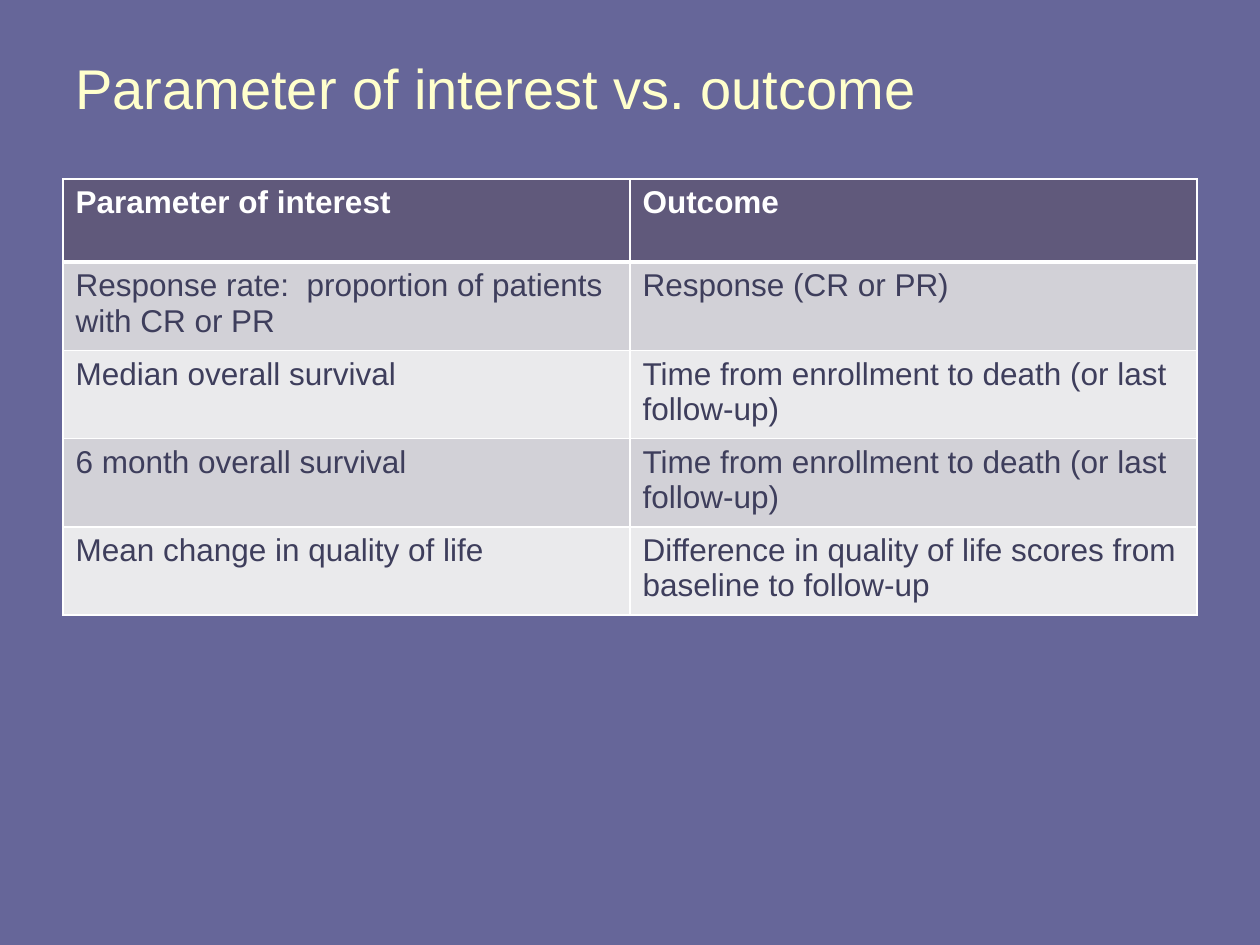
from lxml import etree
from pptx import Presentation
from pptx.dml.color import RGBColor
from pptx.enum.text import MSO_ANCHOR
from pptx.oxml.ns import qn
from pptx.util import Inches, Pt

MIDDLE = MSO_ANCHOR.MIDDLE

TITLE = "Parameter of interest vs. outcome"
ROWS = [
    ("Parameter of interest", "Outcome"),
    ("Response rate:  proportion of patients with CR or PR", "Response (CR or PR)"),
    ("Median overall survival", "Time from enrollment to death (or last follow-up)"),
    ("6 month overall survival", "Time from enrollment to death (or last follow-up)"),
    ("Mean change in quality of life",
     "Difference in quality of life scores from baseline to follow-up"),
]
COLORS = {
    "background": "666699",
    "title": "FFFFCC",
    "header": "60597B",
    "header_text": "FFFFFF",
    "odd_row": "D2D1D7",
    "even_row": "EAEAEC",
    "body_text": "3E3E5C",
    "border": "FFFFFF",
}
FONT = "Arial"
LEFT, WIDTH = 0.5, 9
TABLE_TOP, ROW_HEIGHT = 1.42, 0.66


def rgb(name):
    return RGBColor.from_string(COLORS[name])


def write(tf, text, size=18, color="body_text", bold=False):
    tf.word_wrap = True
    r = tf.paragraphs[0].add_run()
    r.text = text
    r.font.name = FONT
    r.font.size = Pt(size)
    r.font.bold = bold
    r.font.color.rgb = rgb(color)


def set_borders(cell, widths):
    tc_pr = cell._tc.get_or_add_tcPr()
    for i, (side, width) in enumerate(widths.items()):
        ln = etree.Element(qn(f"a:ln{side}"), w=str(Pt(width)))
        fill = etree.SubElement(ln, qn("a:solidFill"))
        etree.SubElement(fill, qn("a:srgbClr"), val=COLORS["border"])
        tc_pr.insert(i, ln)


def add_title(s):
    tf = s.shapes.add_textbox(
        Inches(LEFT), Inches(0.3), Inches(WIDTH), Inches(0.78)).text_frame
    tf.vertical_anchor = MIDDLE
    write(tf, TITLE, size=32, color="title")


def add_outcome_table(s):
    table = s.shapes.add_table(
        len(ROWS), len(ROWS[0]), Inches(LEFT), Inches(TABLE_TOP),
        Inches(WIDTH), Inches(ROW_HEIGHT * len(ROWS))).table
    for i, row in enumerate(ROWS):
        header = i == 0
        fill = "header" if header else "odd_row" if i % 2 else "even_row"
        for j, text in enumerate(row):
            cell = table.cell(i, j)
            cell.fill.solid()
            cell.fill.fore_color.rgb = rgb(fill)
            write(cell.text_frame, text, bold=header,
                  color="header_text" if header else "body_text")
            set_borders(cell, {"L": 1, "R": 1, "T": 3 if i == 1 else 1,
                               "B": 3 if header else 1})


def main():
    prs = Presentation()
    prs.slide_width, prs.slide_height = Inches(10), Inches(7.5)
    s = prs.slides.add_slide(prs.slide_layouts[6])
    s.background.fill.solid()
    s.background.fill.fore_color.rgb = rgb("background")
    add_title(s)
    add_outcome_table(s)
    prs.save("out.pptx")


if __name__ == "__main__":
    main()
